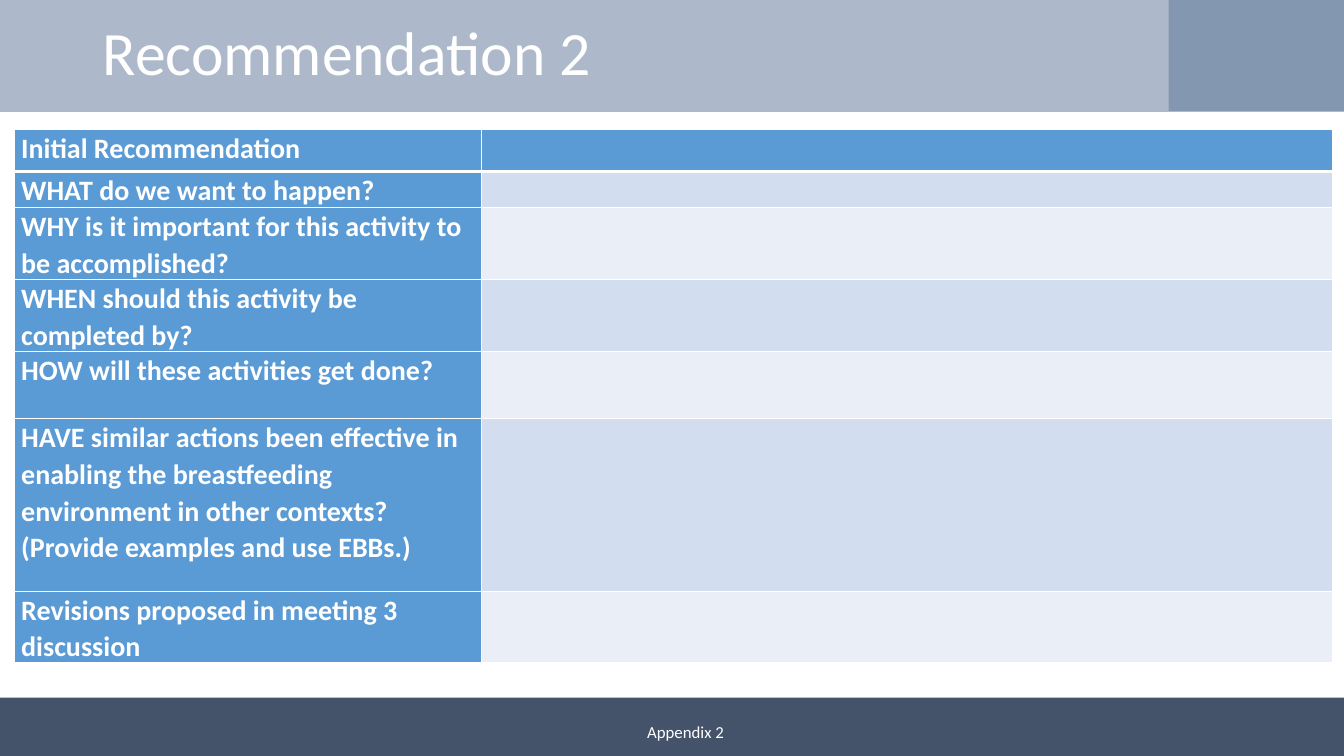
from dataclasses import dataclass

from lxml import etree
from pptx import Presentation
from pptx import util as u
from pptx.dml.color import RGBColor
from pptx.enum import shapes, text
from pptx.oxml import ns


@dataclass(frozen=True)
class Theme:
    font: str = "Calibri"
    white: str = "FFFFFF"
    band: str = "ADB9CA"
    block: str = "8497B0"
    foot: str = "445369"
    head: str = "5B9BD5"
    odd: str = "D2DEEF"
    even: str = "EAEFF7"
    title: int = 44
    body: int = 20
    small: int = 12
    thin: int = 1
    thick: int = 3


class Deck:
    """Draws on one slide; all lengths are percentages of its size."""

    def __init__(self, theme):
        self.theme = theme
        self.prs = Presentation()
        self.prs.slide_width = u.Inches(13.33)
        self.prs.slide_height = u.Inches(7.5)
        self.slide = self.prs.slides.add_slide(self.prs.slide_layouts[6])

    def wide(self, share):
        return int(self.prs.slide_width * share / 100)

    def high(self, share):
        return int(self.prs.slide_height * share / 100)

    def place(self, left, top, width, height):
        return self.wide(left), self.high(top), self.wide(width), self.high(height)

    def style(self, para, size, bold=False):
        for run in para.runs:
            run.font.name = self.theme.font
            run.font.size = u.Pt(size)
            run.font.bold = bold
            run.font.color.rgb = RGBColor.from_string(self.theme.white)

    def bar(self, area, color):
        shape = self.slide.shapes.add_shape(
            shapes.MSO_SHAPE.RECTANGLE, *self.place(*area))
        shape.shadow.inherit = False
        shape.fill.solid()
        shape.fill.fore_color.rgb = RGBColor.from_string(color)
        shape.line.fill.background()

    def label(self, area, words, size, align, space=None):
        frame = self.slide.shapes.add_textbox(*self.place(*area)).text_frame
        frame.word_wrap = True
        frame.vertical_anchor = text.MSO_ANCHOR.MIDDLE
        frame.text = words
        para = frame.paragraphs[0]
        para.alignment = align
        para.line_spacing = space
        self.style(para, size)

    def edge(self, cell, side, width):
        props = cell._tc.get_or_add_tcPr()
        line = etree.SubElement(props, ns.qn("a:ln" + side), w=str(u.Pt(width)))
        fill = etree.SubElement(line, ns.qn("a:solidFill"))
        etree.SubElement(fill, ns.qn("a:srgbClr"), val=self.theme.white)

    def cell(self, cell, row, color):
        cell.margin_left = cell.margin_right = u.Inches(0.07)
        cell.margin_top = cell.margin_bottom = 0
        thin, thick = self.theme.thin, self.theme.thick
        self.edge(cell, "L", thin)
        self.edge(cell, "R", thin)
        self.edge(cell, "T", thick if row == 1 else thin)
        self.edge(cell, "B", thick if row == 0 else thin)
        cell.fill.solid()
        cell.fill.fore_color.rgb = RGBColor.from_string(color)

    def form(self, left, top, cols, rows):
        """Table of (prompt, height) rows, each with an empty answer cell."""
        area = left, top, sum(cols), sum(height for _, height in rows)
        table = self.slide.shapes.add_table(
            len(rows), len(cols), *self.place(*area)).table
        for col, width in zip(table.columns, cols):
            col.width = self.wide(width)
        for i, (words, height) in enumerate(rows):
            table.rows[i].height = self.high(height)
            prompt, answer = table.rows[i].cells
            prompt.text_frame.text = words
            para = prompt.text_frame.paragraphs[0]
            para.line_spacing = 1.07
            self.style(para, self.theme.body, bold=True)
            stripe = self.theme.odd if i % 2 else self.theme.even
            self.cell(prompt, i, self.theme.head)
            self.cell(answer, i, stripe if i else self.theme.head)


PROMPTS = [
    ("Initial Recommendation", 5.6),
    ("WHAT do we want to happen?", 4.4),
    ("WHY is it important for this activity to be accomplished?", 8.93),
    ("WHEN should this activity be completed by?", 8.93),
    ("HOW will these activities get done?", 8.93),
    ("HAVE similar actions been effective in enabling the breastfeeding "
     "environment in other contexts?\v(Provide examples and use EBBs.)", 22.8),
    ("Revisions proposed in meeting 3 discussion", 8.93),
]


def main():
    theme = Theme()
    deck = Deck(theme)
    deck.bar((0, 0, 100, 14.8), theme.band)
    deck.bar((0, 92.27, 100, 7.73), theme.foot)
    deck.bar((86.95, 0, 13.05, 14.67), theme.block)
    deck.label((17.93, 94.13, 66.17, 5.33), "Appendix 2", theme.small,
               text.PP_ALIGN.CENTER)
    deck.form(1.05, 17.07, (34.8, 63.3), PROMPTS)
    deck.label((6.9, 2, 78.24, 10.67), "Recommendation 2", theme.title,
               text.PP_ALIGN.LEFT, u.Pt(46))
    deck.prs.save("out.pptx")


if __name__ == "__main__":
    main()
